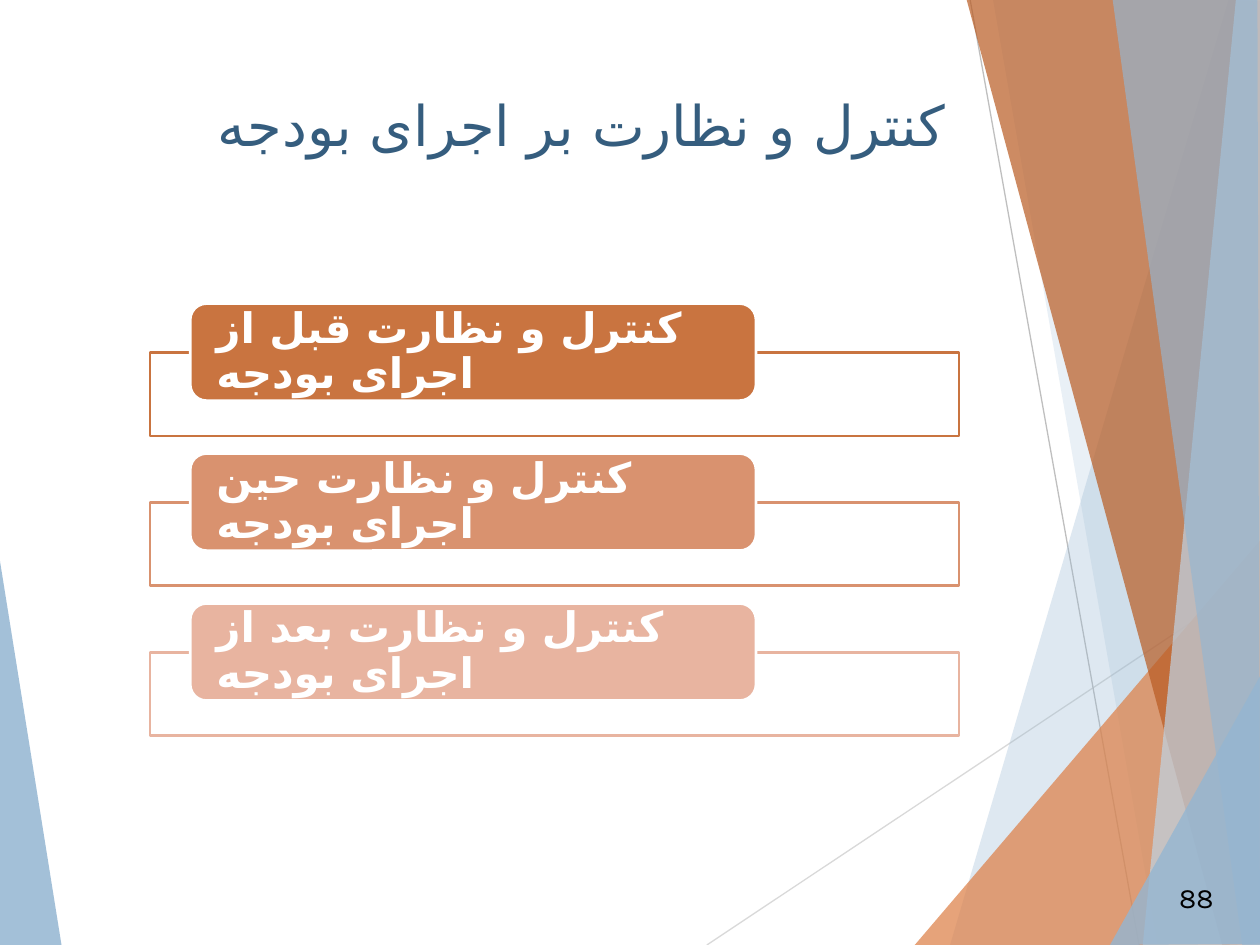
from lxml import etree
from pptx import Presentation
from pptx.dml.color import RGBColor
from pptx.enum.shapes import MSO_CONNECTOR, MSO_SHAPE
from pptx.enum.text import MSO_ANCHOR, PP_ALIGN
from pptx.oxml.ns import qn
from pptx.util import Inches, Pt

RECT, ROUND = MSO_SHAPE.RECTANGLE, MSO_SHAPE.ROUNDED_RECTANGLE
STRAIGHT = MSO_CONNECTOR.STRAIGHT
TOP, MIDDLE = MSO_ANCHOR.TOP, MSO_ANCHOR.MIDDLE
LEFT, RIGHT = PP_ALIGN.LEFT, PP_ALIGN.RIGHT

FONT, PERSIAN_FONT = "Karla", "DejaVu Sans"
COLORS = {
    "title": "355D7E", "white": "FFFFFF", "black": "000000",
    "blue": "94B6D2", "pale": "BFD3E4", "orange": "DD8047", "rust": "B95B22",
    "line_light": "D9D9D9", "line_mid": "BFBFBF",
    "before": "C97440", "during": "D9926F", "after": "E8B4A0",
}
TITLE = "کنترل و نظارت بر اجرای بودجه"
STAGES = [
    ("کنترل و نظارت قبل از اجرای بودجه", "before"),
    ("کنترل و نظارت حین اجرای بودجه", "during"),
    ("کنترل و نظارت بعد از اجرای بودجه", "after"),
]
PAGE = "88"
LEFT_FACET = ("blue", 85, [(-0.01, 4.39), (0.49, 7.51), (-0.01, 7.5)])
RAYS = [
    ("line_light", (5.61, 7.5, 10.01, 4.57)),
    ("line_mid", (7.7, 0, 9.04, 7.5)),
]
RIGHT_FACETS = [
    ("blue", 30, [(9.75, 0), (7.54, 7.5), (10.02, 7.51), (10.01, 0.01)]),
    ("blue", 20, [(7.88, -0.01), (9.19, 7.5), (10.01, 7.5), (10.01, -0.01)]),
    ("orange", 72, [(7.26, 7.5), (10, 4.29), (10.01, 7.5)]),
    ("rust", 70, [(7.67, -0.01), (9.7, 7.5), (10.01, 7.49), (10.01, -0.01)]),
    ("pale", 70, [(9.81, -0.01), (9.07, 7.5), (10.01, 7.5), (10, -0.01)]),
    ("blue", 65, [(8.83, -0.01), (9.86, 7.5), (10, 7.5), (9.98, -0.01)]),
    ("blue", 80, [(8.81, 7.5), (10.01, 5.35), (10.01, 7.49)]),
]
STAGE_TOP, STAGE_PITCH, FRAME_DROP = 2.41, 1.19, 0.39


def rgb(name):
    return RGBColor.from_string(COLORS[name])


def paint(sp, fill, alpha=100, line=None):
    sp.shadow.inherit = False
    sp.fill.solid()
    sp.fill.fore_color.rgb = rgb(fill)
    if alpha < 100:
        color = sp._element.spPr.find(qn("a:solidFill"))[0]
        etree.SubElement(color, qn("a:alpha")).set("val", str(alpha * 1000))
    if line:
        sp.line.color.rgb = rgb(line)
        sp.line.width = Pt(1.5)
    else:
        sp.line.fill.background()


def write(sp, text, size, color, align, anchor, bold=False):
    tf = sp.text_frame
    tf.text = text
    tf.word_wrap = True
    tf.vertical_anchor = anchor
    p = tf.paragraphs[0]
    p.alignment = align
    font = p.runs[0].font
    font.size, font.bold, font.name = Pt(size), bold, FONT
    font.color.rgb = rgb(color)
    etree.SubElement(font._element, qn("a:cs")).set("typeface", PERSIAN_FONT)
    return tf


def add_facet(s, color, alpha, points):
    points = [(Inches(x), Inches(y)) for x, y in points]
    builder = s.shapes.build_freeform(*points[0])
    builder.add_line_segments(points[1:], close=True)
    paint(builder.convert_to_shape(), color, alpha)


def add_ray(s, color, ends):
    ray = s.shapes.add_connector(STRAIGHT, *map(Inches, ends))
    ray.line.color.rgb = rgb(color)
    ray.line.width = Pt(0.75)
    etree.SubElement(ray._element.spPr, qn("a:effectLst"))


def add_stage(s, top, text, color):
    box = map(Inches, (1.19, top + FRAME_DROP, 6.42, 0.66))
    paint(s.shapes.add_shape(RECT, *box), "white", 90, color)
    label = s.shapes.add_shape(ROUND, *map(Inches, (1.51, top, 4.49, 0.77)))
    paint(label, color, line="white")
    tf = write(label, text, 24, "white", LEFT, MIDDLE, True)
    tf.margin_left = tf.margin_right = Inches(0.17)
    tf.margin_top = tf.margin_bottom = 0
    tf.paragraphs[0].line_spacing = 0.9


def main():
    """Build the budget control slide."""
    prs = Presentation()
    prs.slide_width, prs.slide_height = Inches(10), Inches(7.5)
    s = prs.slides.add_slide(prs.slide_layouts[5])

    add_facet(s, *LEFT_FACET)
    for ray in RAYS:
        add_ray(s, *ray)
    for facet in RIGHT_FACETS:
        add_facet(s, *facet)

    title = s.shapes.title
    title.left, title.top = Inches(0.67), Inches(0.67)
    title.width, title.height = Inches(6.94), Inches(1.08)
    write(title, TITLE, 32, "title", RIGHT, TOP)

    for i, (text, color) in enumerate(STAGES):
        add_stage(s, STAGE_TOP + i * STAGE_PITCH, text, color)

    number = s.shapes.add_textbox(*map(Inches, (9.23, 6.93, 0.5, 0.38)))
    write(number, PAGE, 16, "black", RIGHT, MIDDLE)
    prs.save("out.pptx")


if __name__ == "__main__":
    main()
